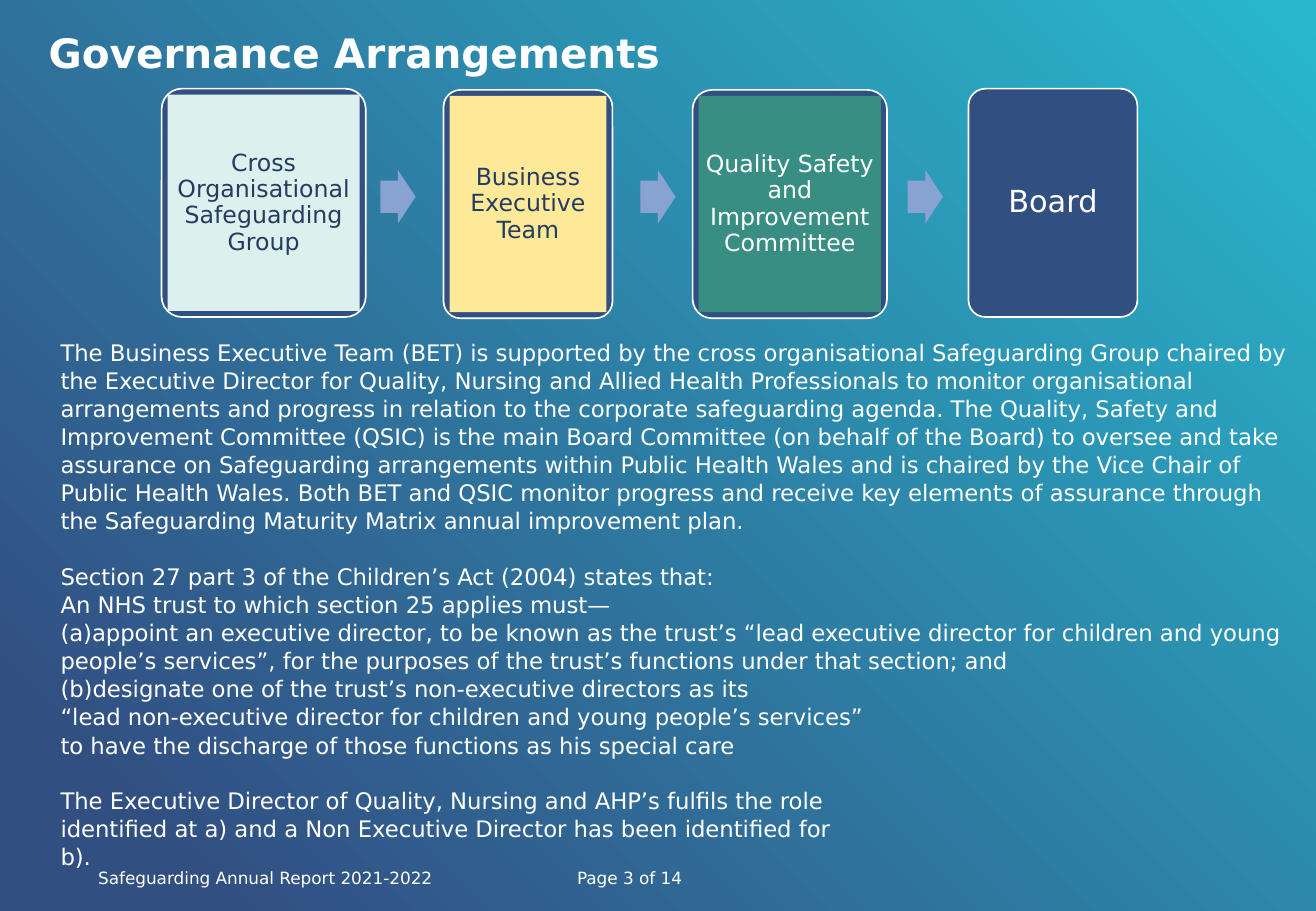
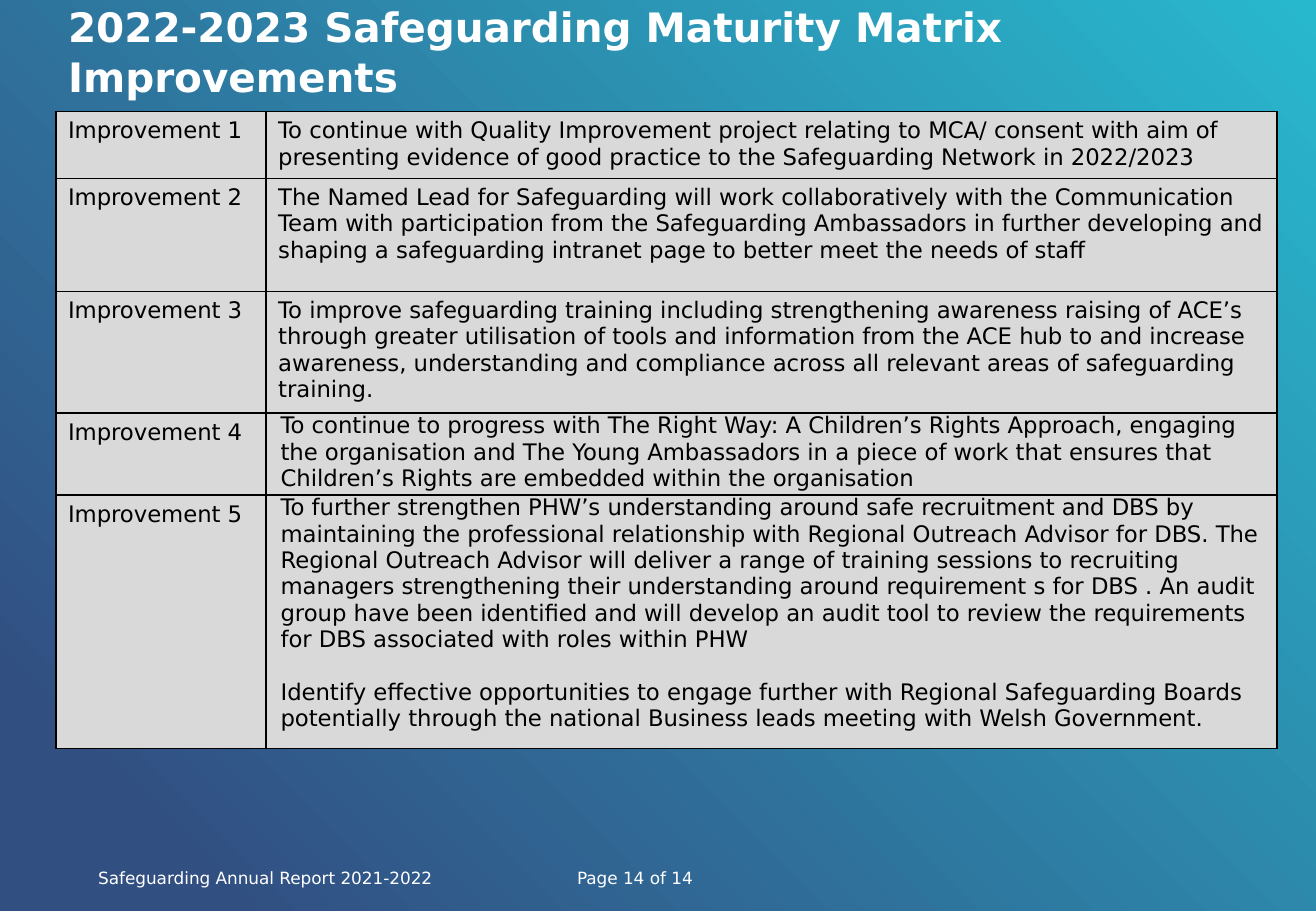
import pptx
import pptx.dml.color
import pptx.enum.shapes
import pptx.enum.text
import pptx.oxml.ns
import pptx.util
from lxml import etree

Inches = pptx.util.Inches
Pt = pptx.util.Pt
SHAPE = pptx.enum.shapes.MSO_SHAPE
ALIGN = pptx.enum.text.PP_ALIGN
ANCHOR = pptx.enum.text.MSO_ANCHOR
qn = pptx.oxml.ns.qn

FONT = "DejaVu Sans"
WHITE, BLACK, NAVY, INK = "FFFFFF", "000000", "324F82", "253B61"
TEAL, MINT, YELLOW, GREEN = "28B8CE", "DCF1EE", "FEE998", "388E82"
ARROW, GREY = "88A2D1", "D9D9D9"
BODY_SIZE = 13.5
PAGE_TOTAL = 14

CARDS = [  # left, top, width, panel fill, text colour, size, label
    (1.33, 0.73, 1.68, MINT, INK, 14, "Cross Organisational Safeguarding Group"),
    (3.65, 0.74, 1.39, YELLOW, INK, 14, "Business Executive Team"),
    (5.70, 0.74, 1.60, GREEN, WHITE, 14, "Quality Safety and Improvement Committee"),
    (7.97, 0.73, 1.39, None, WHITE, 18, "Board"),
]
ARROW_LEFTS = [3.13, 5.27, 7.47]

GOVERNANCE_BLOCKS = [
    ["The Business Executive Team (BET) is supported by the cross organisational Safeguarding "
     "Group chaired by the Executive Director for Quality, Nursing and Allied Health Professionals "
     "to monitor organisational arrangements and progress in relation to the corporate safeguarding "
     "agenda. The Quality, Safety and Improvement Committee (QSIC) is the main Board Committee (on "
     "behalf of the Board) to oversee and take assurance on Safeguarding arrangements within Public "
     "Health Wales and is chaired by the Vice Chair of Public Health Wales. Both BET and QSIC "
     "monitor progress and receive key elements of assurance through the Safeguarding Maturity "
     "Matrix annual improvement plan."],
    ["Section 27 part 3 of the Children’s Act (2004) states that:",
     "An NHS trust to which section 25 applies must—",
     "(a)appoint an executive director, to be known as the trust’s “lead executive director for "
     "children and young people’s services”, for the purposes of the trust’s functions under that "
     "section; and",
     "(b)designate one of the trust’s non-executive directors as its",
     "“lead non-executive director for children and young people’s services”",
     "to have the discharge of those functions as his special care"],
    ["The Executive Director of Quality, Nursing and AHP’s fulfils the role",
     "identified at a) and a Non Executive Director has been identified for",
     "b)."],
]

IMPROVEMENTS = [  # row height, side margin, top and bottom margin, paragraphs
    (0.54, 0.10, 0.05, [
        "To continue with Quality Improvement project relating to MCA/ consent with aim of "
        "presenting evidence of good practice to the Safeguarding Network in 2022/2023"]),
    (0.93, 0.10, 0.05, [
        "The Named Lead for Safeguarding will work collaboratively with the Communication Team with "
        "participation from the Safeguarding Ambassadors in further developing and shaping a "
        "safeguarding intranet page to better meet the needs of staff"]),
    (0.98, 0.10, 0.05, [
        "To improve safeguarding training including strengthening awareness raising of ACE’s through "
        "greater utilisation of tools and information from the ACE hub to and increase awareness, "
        "understanding and compliance across all relevant areas of safeguarding training."]),
    (0.66, 0.12, 0, [
        "To continue to progress with The Right Way: A Children’s Rights Approach, engaging the "
        "organisation and The Young Ambassadors in a piece of work that ensures that Children’s "
        "Rights are embedded within the organisation"]),
    (2.09, 0.12, 0, [
        "To further strengthen PHW’s understanding around safe recruitment and DBS by maintaining "
        "the professional relationship with Regional Outreach Advisor for DBS. The Regional Outreach "
        "Advisor will deliver a range of training sessions to recruiting managers strengthening "
        "their understanding around requirement s for DBS . An audit group have been identified and "
        "will develop an audit tool to review the requirements for DBS associated with roles within "
        "PHW",
        "Identify effective opportunities to engage further with Regional Safeguarding Boards "
        "potentially through the national Business leads meeting with Welsh Government."]),
]


def rgb(value):
    return pptx.dml.color.RGBColor.from_string(value)


def apply(target, formats):
    for name, value in formats.items():
        setattr(target, name, value)


def write(frame, blocks, size, color, bold=False, gap=0, **formats):
    """Write blocks of paragraphs, with a gap in points before each later block."""
    lines = [(text, gap if block_no and not line_no else 0)
             for block_no, block in enumerate(blocks)
             for line_no, text in enumerate(block)]
    for index, (text, before) in enumerate(lines):
        para = frame.paragraphs[0] if index == 0 else frame.add_paragraph()
        span = para.add_run()
        span.text = text
        apply(para, {"space_before": Pt(before), **formats})
        apply(span.font, {"name": FONT, "size": Pt(size), "bold": bold})
        span.font.color.rgb = rgb(color)


def set_margins(target, side, edge):
    apply(target, {"margin_left": Inches(side), "margin_right": Inches(side),
                   "margin_top": Inches(edge), "margin_bottom": Inches(edge)})


def add_box(page, left, top, width, height):
    box = page.shapes.add_textbox(Inches(left), Inches(top), Inches(width), Inches(height))
    box.text_frame.word_wrap = True
    return box


def add_shape(page, kind, left, top, width, height, fill, line=None):
    shape = page.shapes.add_shape(kind, Inches(left), Inches(top), Inches(width), Inches(height))
    shape.shadow.inherit = False
    if fill:
        shape.fill.solid()
        shape.fill.fore_color.rgb = rgb(fill)
    else:
        shape.fill.background()
    if line:
        shape.line.color.rgb = rgb(line)
        shape.line.width = Pt(1)
    else:
        shape.line.fill.background()
    return shape


def set_background(master):
    fill = master.background.fill
    fill.gradient()
    fill.gradient_angle = 45
    for stop, position, color in zip(fill.gradient_stops, (0.1, 1), (NAVY, TEAL)):
        stop.position = position
        stop.color.rgb = rgb(color)


def add_footer(page, number):
    frame = add_box(page, 0.71, 7.09, 5.89, 0.27).text_frame
    tabs = etree.SubElement(frame.paragraphs[0]._p.get_or_add_pPr(), qn("a:tabLst"))
    etree.SubElement(tabs, qn("a:tab"), pos=str(Inches(3.94)), algn="l")
    write(frame, [[f"Safeguarding Annual Report 2021-2022\tPage {number} of {PAGE_TOTAL}"]],
          10, WHITE)


def add_page(deck, title, number, left, top, width, height):
    """Add a page with its title in the given box, and the footer."""
    page = deck.slides.add_slide(deck.slide_layouts.get_by_name("Title Only"))
    heading = page.shapes.title
    apply(heading, {"left": Inches(left), "top": Inches(top),
                    "width": Inches(width), "height": Inches(height)})
    apply(heading.text_frame, {"vertical_anchor": ANCHOR.MIDDLE, "word_wrap": True,
                               "auto_size": pptx.enum.text.MSO_AUTO_SIZE.NONE})
    write(heading.text_frame, [[title]], 24, WHITE, bold=True,
          alignment=ALIGN.LEFT, line_spacing=1.03)
    add_footer(page, number)
    return page


def add_card(page, left, top, width, height, panel_fill, color, size, label):
    card = add_shape(page, SHAPE.ROUNDED_RECTANGLE, left, top, width, height, NAVY, WHITE)
    card.adjustments[0] = 0.1
    inset = 0.05
    panel = add_shape(page, SHAPE.RECTANGLE, left + inset, top + inset,
                      width - 2 * inset, height - 2 * inset, panel_fill)
    frame = panel.text_frame
    apply(frame, {"word_wrap": True, "vertical_anchor": ANCHOR.MIDDLE})
    set_margins(frame, 0.04, 0.06)
    write(frame, [[label]], size, color, alignment=ALIGN.CENTER, line_spacing=0.93)


def add_governance_page(deck):
    page = add_page(deck, "Governance Arrangements", 3, 0.3, 0.13, 8.66, 0.59)
    for left, top, width, *look in CARDS:
        add_card(page, left, top, width, 1.88, *look)
    for left in ARROW_LEFTS:
        arrow = add_shape(page, SHAPE.RIGHT_ARROW, left, 1.4, 0.29, 0.44, ARROW)
        arrow.adjustments[0] = 0.6
    box = add_box(page, 0.4, 2.73, 10.34, 4.42)
    write(box.text_frame, GOVERNANCE_BLOCKS, BODY_SIZE, WHITE, gap=16.2, line_spacing=1.03)


def fill_cell(cell, paragraphs, side, edge):
    properties = cell._tc.get_or_add_tcPr()
    for border in ("a:lnL", "a:lnR", "a:lnT", "a:lnB"):
        line = etree.SubElement(properties, qn(border), w=str(Pt(1)))
        solid = etree.SubElement(line, qn("a:solidFill"))
        etree.SubElement(solid, qn("a:srgbClr"), val=BLACK)
    cell.fill.solid()
    cell.fill.fore_color.rgb = rgb(GREY)
    set_margins(cell, side, edge)
    write(cell.text_frame, [[text] for text in paragraphs], BODY_SIZE, BLACK, gap=15.7)


def add_improvement_table(page, left, top, widths):
    height = sum(row[0] for row in IMPROVEMENTS)
    table = page.shapes.add_table(len(IMPROVEMENTS), len(widths), Inches(left), Inches(top),
                                  Inches(sum(widths)), Inches(height)).table
    apply(table, {"first_row": False, "horz_banding": False})
    for column, width in zip(table.columns, widths):
        column.width = Inches(width)
    for index, (row_height, side, edge, paragraphs) in enumerate(IMPROVEMENTS):
        table.rows[index].height = Inches(row_height)
        fill_cell(table.cell(index, 0), [f"Improvement {index + 1}"], 0.1, 0.05)
        fill_cell(table.cell(index, 1), paragraphs, side, edge)


def add_improvements_page(deck):
    page = add_page(deck, "2022-2023 Safeguarding Maturity Matrix Improvements", 14,
                    0.46, 0, 10.24, 0.84)
    add_improvement_table(page, 0.46, 0.92, (1.73, 8.32))


def main():
    deck = pptx.Presentation()
    apply(deck, {"slide_width": Inches(10.83), "slide_height": Inches(7.5)})
    set_background(deck.slide_master)
    add_governance_page(deck)
    add_improvements_page(deck)
    deck.save("out.pptx")


if __name__ == "__main__":
    main()
